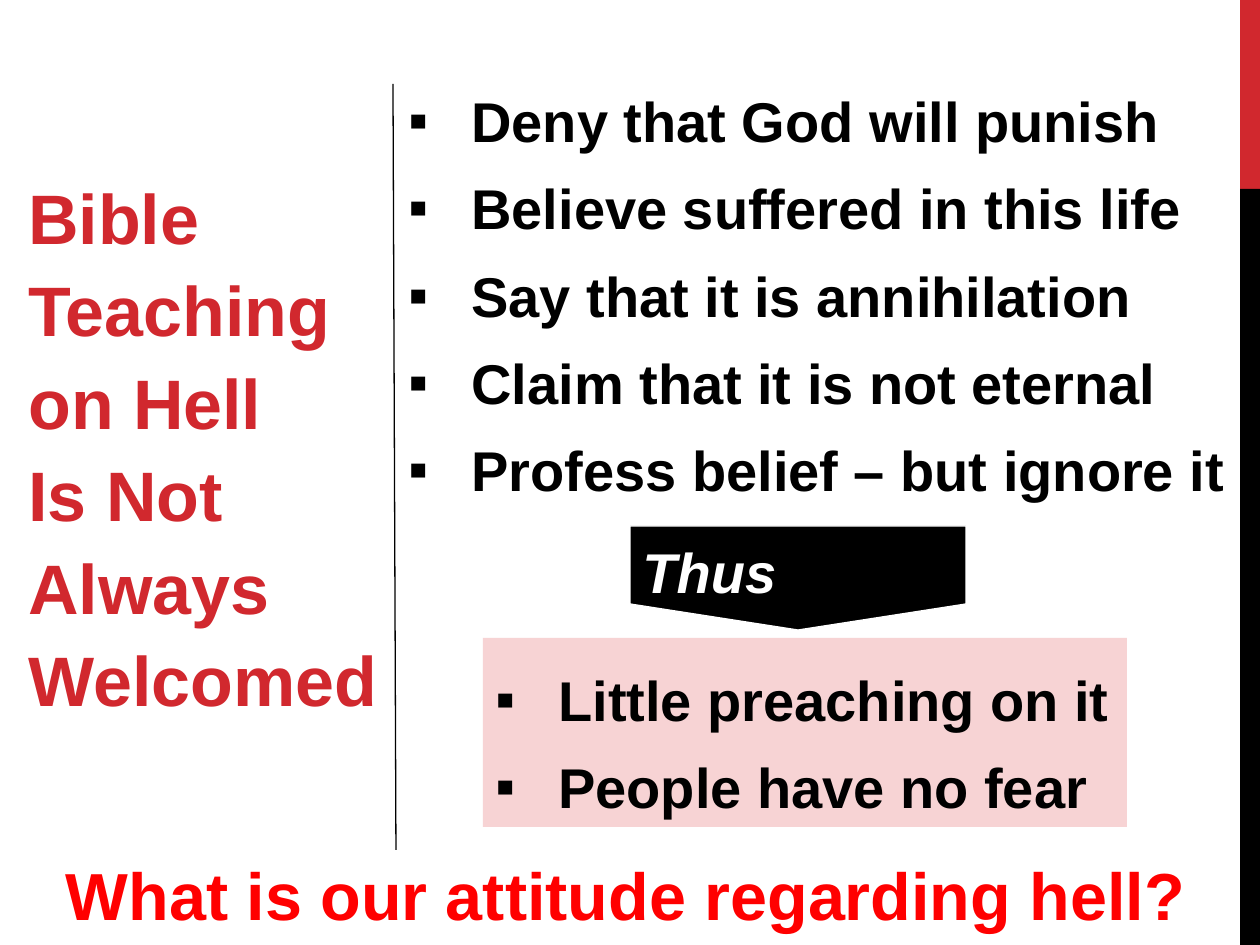
"""Build the slide on how Bible teaching on hell is received."""
import pptx
import pptx.util
import pptx.dml.color
import pptx.enum.shapes
import pptx.enum.text
import pptx.oxml.ns
from lxml import etree

WIDE, HIGH = 1260, 945
RED, BLACK, WHITE = "D1282E", "000000", "FFFFFF"
BARS = [(1240, 0, 20, 189, RED), (1240, 189, 20, 756, BLACK)]
TITLE = ["Bible", "Teaching", "on Hell", "Is Not", "Always", "Welcomed"]
VIEWS = [
    "Deny that God will punish",
    "Believe suffered in this life",
    "Say that it is annihilation",
    "Claim that it is not eternal",
    "Profess belief – but ignore it",
]
FRUITS = ["Little preaching on it", "People have no fear"]
QUERY = ["What is our attitude regarding hell?"]

KIND = pptx.enum.shapes.MSO_SHAPE
FIT = pptx.enum.text.MSO_AUTO_SIZE
CENTER = pptx.enum.text.PP_ALIGN.CENTER
MIDDLE = pptx.enum.text.MSO_ANCHOR.MIDDLE


def px(num):
    return pptx.util.Emu(int(num * 914400 / 126))


def color(code):
    return pptx.dml.color.RGBColor.from_string(code)


def add(parent, tag, **attrs):
    return etree.SubElement(parent, pptx.oxml.ns.qn(tag), attrs)


def block(kind, area, fill):
    shape = slide.shapes.add_shape(kind, *map(px, area))
    shape.shadow.inherit = False
    shape.fill.solid()
    shape.fill.fore_color.rgb = color(fill)
    shape.line.fill.background()
    return shape


def textbox(area):
    return slide.shapes.add_textbox(*map(px, area))


def write(shape, lines, size, code, space=1.0, mark=None, align=None,
          wrap=False, grow=True, italic=None):
    frame = shape.text_frame
    frame.text = "\n".join(lines)
    frame.word_wrap = wrap
    frame.auto_size = FIT.SHAPE_TO_FIT_TEXT if grow else FIT.NONE
    for para in frame.paragraphs:
        para.alignment = align or pptx.enum.text.PP_ALIGN.LEFT
        para.line_spacing = space
        if mark:
            props = para._p.get_or_add_pPr()
            props.set("marL", "457200")
            props.set("indent", "-457200")
            add(props, "a:buFont", typeface="Arial")
            add(props, "a:buChar", char=mark)
        font = para.font
        font.name, font.size = "Arial", pptx.util.Pt(size)
        font.bold, font.italic = True, italic
        font.color.rgb = color(code)
    return frame


def shade(frame):
    for para in frame.paragraphs:
        for run in para.runs:
            effects = add(run._r.get_or_add_rPr(), "a:effectLst")
            shadow = add(effects, "a:outerShdw", dist="35921", dir="2700000")
            add(shadow, "a:srgbClr", val=BLACK)


deck = pptx.Presentation()
deck.slide_width, deck.slide_height = px(WIDE), px(HIGH)
slide = deck.slides.add_slide(deck.slide_layouts[6])

for *area, fill in BARS:
    block(KIND.RECTANGLE, area, fill)

shade(write(textbox((16, 160, 378, 572)), TITLE, 40, RED, 1.1))
write(textbox((396, 60, 863, 454)), VIEWS, 32, BLACK, 1.3, "▪")
panel = block(KIND.RECTANGLE, (483, 638, 644, 189), "F7D3D4")
write(panel, FRUITS, 32, BLACK, 1.3, "▪")

arrow = block(KIND.PENTAGON, (746, 410, 104, 336), BLACK)
arrow.rotation = 90
arrow.adjustments[0] = 0.25
arrow.line.color.rgb = color(WHITE)
arrow.line.width = pptx.util.Pt(0.75)
frame = write(arrow, ["Thus"], 32, WHITE, align=CENTER, grow=False, italic=True)
frame.vertical_anchor = MIDDLE
body = frame._txBody.bodyPr
body.set("rot", "10800000")
body.set("vert", "eaVert")

rule = slide.shapes.add_connector(
    pptx.enum.shapes.MSO_CONNECTOR.STRAIGHT, *map(px, (393, 84, 396, 850)))
rule.line.color.rgb = color(BLACK)
rule.line.width = pptx.util.Pt(0.75)
add(rule._element.spPr, "a:effectLst")

write(textbox((25, 848, 1202, 93)), QUERY, 38, "FF0000", align=CENTER, wrap=True)

deck.save("out.pptx")
